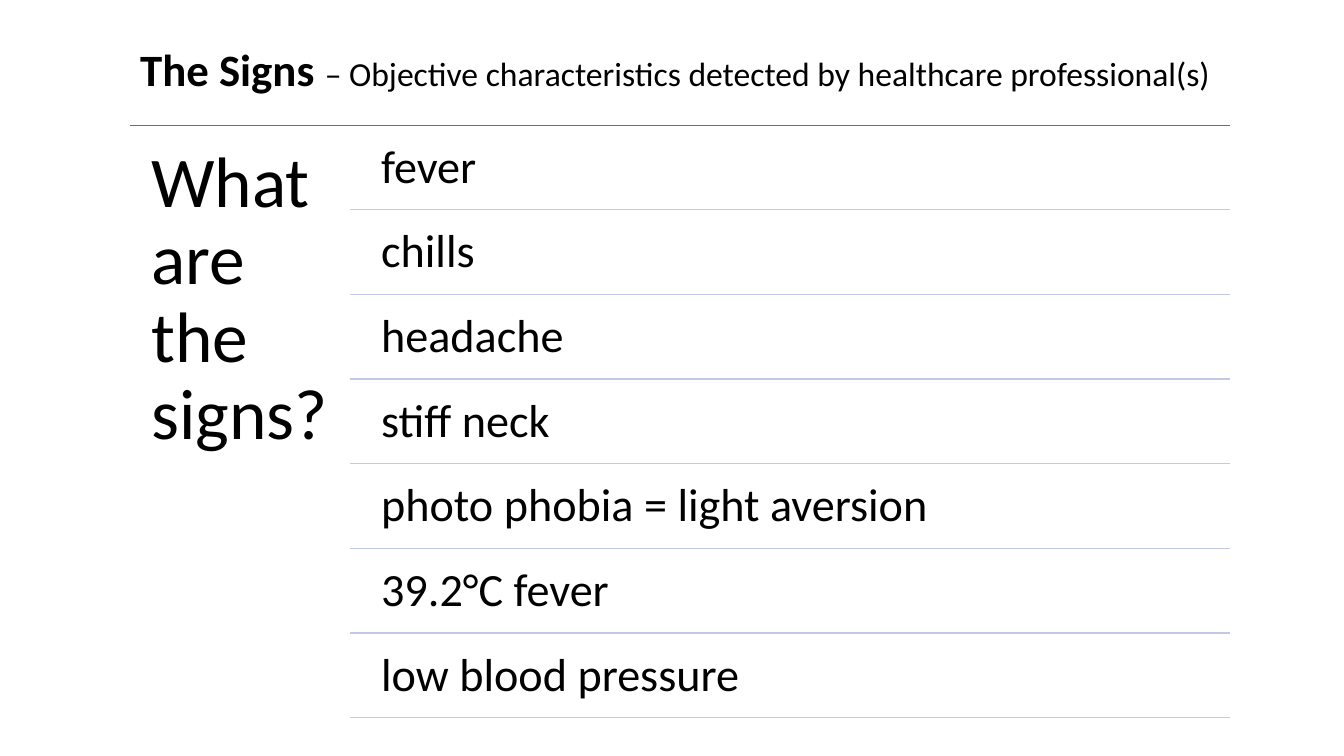
from pptx import Presentation
from pptx.dml.color import RGBColor as RGB
from pptx.enum.shapes import MSO_CONNECTOR as LINK
from pptx.enum.text import MSO_ANCHOR as ANCHOR, MSO_AUTO_SIZE as FIT, PP_ALIGN as ALIGN
from pptx.oxml.ns import qn
from pptx.util import Pt
from lxml import etree

PX = 9144  # 100 px to the inch
COLORS = {"text": "000000", "head": "4472C4", "row": "C1C9E4"}
SIGNS = ["fever", "chills", "headache", "stiff neck",
         "photo phobia = light aversion", "39.2°C fever", "low blood pressure"]
LEFT, RIGHT, TOP = 129, 1220, 124
SPLIT, STEP = 347, 84


def write(para, text, size, bold=False):
    run = para.add_run()
    run.text = text
    look = {"name": "Calibri", "size": Pt(size), "bold": bold}
    for key, val in look.items():
        setattr(run.font, key, val)
    run.font.color.rgb = RGB.from_string(COLORS["text"])


prs = Presentation()
prs.slide_width, prs.slide_height = 1333 * PX, 750 * PX
slide = prs.slides.add_slide(prs.slide_layouts[5])
shapes = slide.shapes

# Title
title = shapes.title
place = {"left": 129, "top": 36, "width": 1087, "height": 64}
for key, val in place.items():
    setattr(title, key, val * PX)
frame = title.text_frame
form = {"word_wrap": True, "auto_size": FIT.SHAPE_TO_FIT_TEXT,
        "vertical_anchor": ANCHOR.TOP}
for key, val in form.items():
    setattr(frame, key, val)
para = frame.paragraphs[0]
para.alignment = ALIGN.LEFT
write(para, "The Signs ", 32, True)
write(para, "– Objective characteristics detected by healthcare professional(s)", 24)

# Rules: one under the title, one under each sign
rules = [(LEFT, TOP, "head", 0.5)]
rules += [(SPLIT, TOP + STEP * n, "row", 1) for n in range(1, len(SIGNS) + 1)]
for x, y, color, width in rules:
    rule = shapes.add_connector(LINK.STRAIGHT, x * PX, y * PX, RIGHT * PX, y * PX)
    rule.line.color.rgb = RGB.from_string(COLORS[color])
    rule.line.width = Pt(width)
    etree.SubElement(rule._element.spPr, qn("a:effectLst"))

# Question on the left, signs on the right
texts = [("What are the signs?", LEFT, TOP, 218, 593, 21, 51)]
texts += [(sign, 364, TOP + 4 + STEP * n, 857, 80, 14, 33)
          for n, sign in enumerate(SIGNS)]
for text, x, y, w, h, inset, size in texts:
    frame = shapes.add_textbox(x * PX, y * PX, w * PX, h * PX).text_frame
    frame.word_wrap = True
    for side in ("left", "top", "right", "bottom"):
        setattr(frame, f"margin_{side}", inset * PX)
    para = frame.paragraphs[0]
    para.line_spacing = 0.9
    write(para, text, size)

prs.save("out.pptx")
